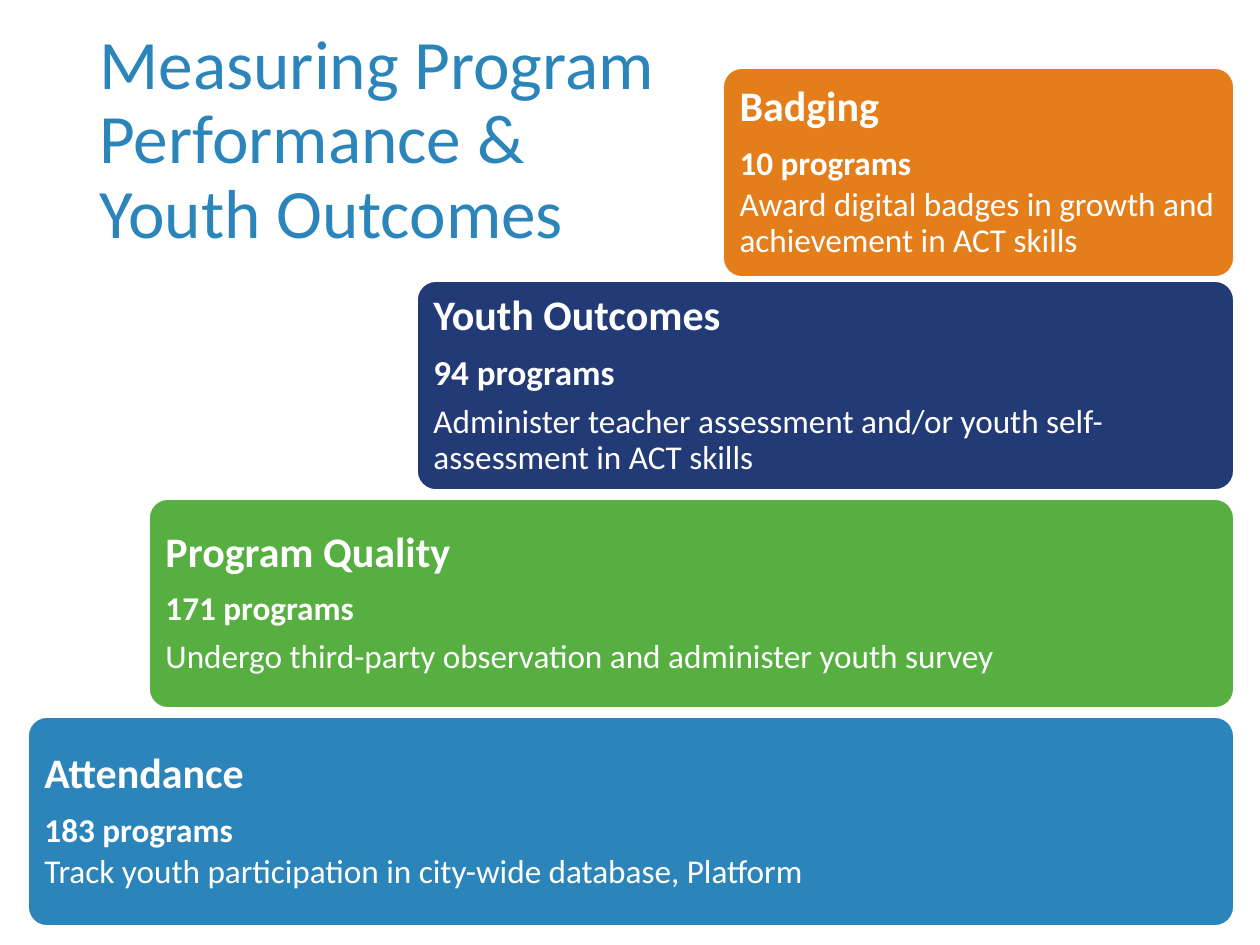
from pptx import Presentation
from pptx.dml.color import RGBColor
from pptx.enum.shapes import MSO_SHAPE as SHAPE
from pptx.enum.text import MSO_ANCHOR as ANCHOR, MSO_AUTO_SIZE as AUTO, PP_ALIGN as ALIGN
from pptx.util import Emu, Pt

WHITE = RGBColor(0xFF, 0xFF, 0xFF)
BLUE = RGBColor(0x2B, 0x85, 0xBA)
GREEN = RGBColor(0x56, 0xAF, 0x40)
NAVY = RGBColor(0x22, 0x3A, 0x76)
ORANGE = RGBColor(0xE4, 0x7E, 0x1A)
FONT = "Calibri"
RIGHT, STEP_H, INSET = 1234, 209, 11


def px(n):
    return Emu(round(n * 914400 / 126))


def add_run(p, text, size, color, bold=False):
    r = p.add_run()
    r.text = text
    r.font.name = FONT
    r.font.size = Pt(size)
    r.font.bold = bold
    r.font.color.rgb = color


prs = Presentation()
prs.slide_width, prs.slide_height = px(1260), px(945)
s = prs.slides.add_slide(prs.slide_layouts[5])

title = s.shapes.title
title.left, title.top, title.width, title.height = px(87), px(50), px(1086), px(183)
tf = title.text_frame
tf.auto_size = AUTO.NONE
tf.vertical_anchor = ANCHOR.MIDDLE
p = tf.paragraphs[0]
p.alignment = ALIGN.LEFT
p.line_spacing = 0.9
for i, line in enumerate(["Measuring Program", "Performance &", "Youth Outcomes"]):
    if i:
        p.add_line_break()
    add_run(p, line, 39.6, BLUE)

# left, top, fill, heading, count, count size, description, space after count and description
steps = [
    (28, 717, BLUE, "Attendance", "183 programs", 19,
     "Track youth participation in city-wide database, Platform", 3, 3),
    (149, 499, GREEN, "Program Quality", "171 programs", 19,
     "Undergo third-party observation and administer youth survey", 7, 7),
    (417, 281, NAVY, "Youth Outcomes", "94 programs", 20,
     "Administer teacher assessment and/or youth self-assessment in ACT skills", 7, 3),
    (723, 68, ORANGE, "Badging", "10 programs", 19,
     "Award digital badges in growth and achievement in ACT skills", 3, 3),
]
for left, top, fill, heading, count, count_size, description, gap, end_gap in steps:
    sp = s.shapes.add_shape(SHAPE.ROUNDED_RECTANGLE, px(left), px(top),
                            px(RIGHT - left), px(STEP_H))
    sp.adjustments[0] = 0.09
    sp.shadow.inherit = False
    sp.fill.solid()
    sp.fill.fore_color.rgb = fill
    sp.line.color.rgb = WHITE
    sp.line.width = Pt(1)
    tf = sp.text_frame
    tf.word_wrap = True
    tf.vertical_anchor = ANCHOR.MIDDLE
    tf.margin_left = tf.margin_right = px(INSET)
    tf.margin_top = tf.margin_bottom = 0
    lines = [(heading, 24, True, 9), (count, count_size, True, gap),
             (description, 19, False, end_gap)]
    for i, (text, size, bold, after) in enumerate(lines):
        p = tf.add_paragraph() if i else tf.paragraphs[0]
        p.alignment = ALIGN.LEFT
        p.line_spacing = 0.9
        p.space_after = Pt(after)
        add_run(p, text, size, WHITE, bold)

prs.save("out.pptx")
